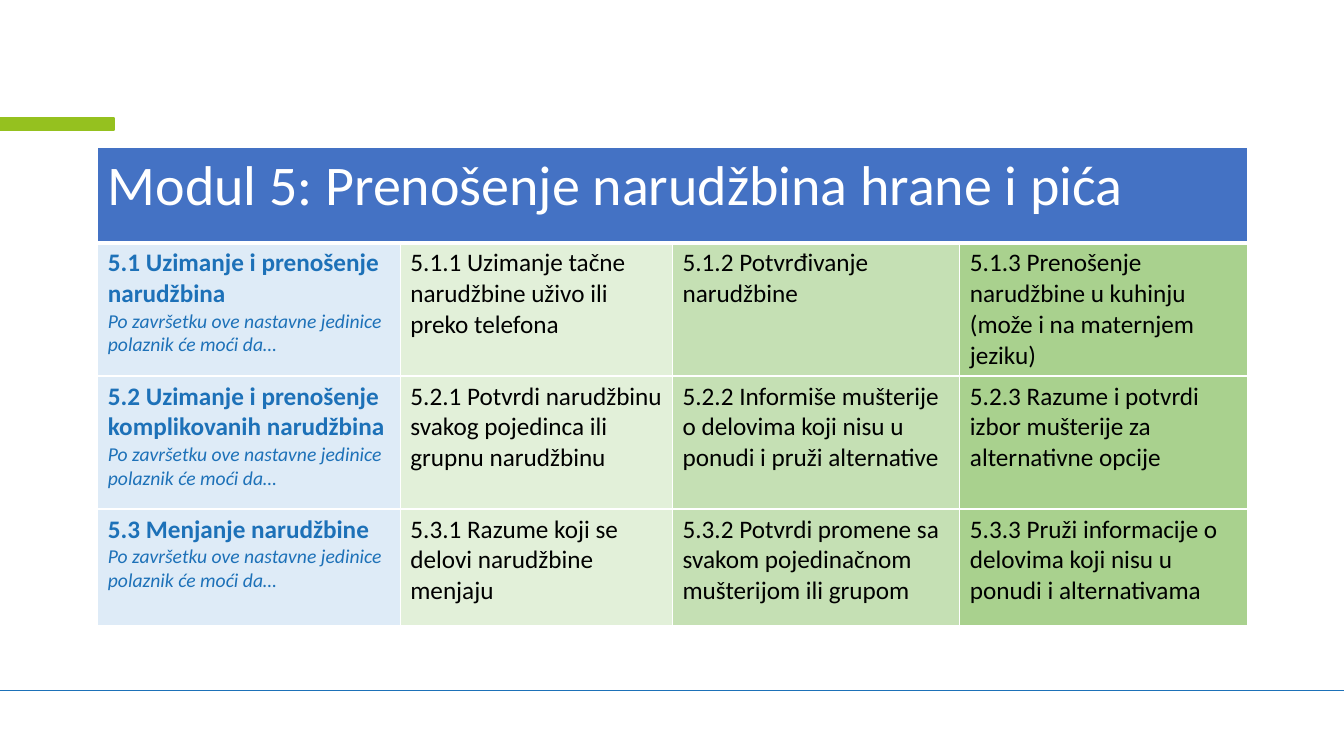
from lxml import etree
from pptx import Presentation
from pptx.dml.color import RGBColor
from pptx.enum.shapes import MSO_CONNECTOR, MSO_SHAPE
from pptx.oxml.ns import qn
from pptx.util import Inches, Pt

COLORS = {
    "blue": "1D71B8",
    "lime": "95C11F",
    "header": "4472C4",
    "white": "FFFFFF",
    "black": "000000",
}
COLUMN_FILLS = ["DEEBF7", "E2F0D9", "C5E0B4", "A9D18E"]
COLUMN_WIDTHS = [3, 2.7, 2.85, 2.85]
ROW_HEIGHTS = [0.95, 1.32, 1.32, 1.16]
TITLE = "Modul 5: Prenošenje narudžbina hrane i pića"
OUTCOME = "Po završetku ove nastavne jedinice polaznik će moći da…"
UNITS = [
    ["5.1 Uzimanje i prenošenje narudžbina",
     "5.1.1 Uzimanje tačne narudžbine uživo ili preko telefona",
     "5.1.2 Potvrđivanje narudžbine",
     "5.1.3 Prenošenje narudžbine u kuhinju (može i na maternjem jeziku)"],
    ["5.2 Uzimanje i prenošenje komplikovanih narudžbina",
     "5.2.1 Potvrdi narudžbinu svakog pojedinca ili grupnu narudžbinu",
     "5.2.2 Informiše mušterije o delovima koji nisu u ponudi i pruži alternative",
     "5.2.3 Razume i potvrdi izbor mušterije za alternativne opcije"],
    ["5.3 Menjanje narudžbine",
     "5.3.1 Razume koji se delovi narudžbine menjaju",
     "5.3.2 Potvrdi promene sa svakom pojedinačnom mušterijom ili grupom",
     "5.3.3 Pruži informacije o delovima koji nisu u ponudi i alternativama"],
]


def style_cell(cell, fill, bottom_width=1):
    """Give the cell white borders and a solid fill."""
    properties = cell._tc.get_or_add_tcPr()
    for side, width in zip("LRTB", [1, 1, 1, bottom_width]):
        border = etree.SubElement(properties, qn(f"a:ln{side}"), w=str(Pt(width)))
        solid = etree.SubElement(border, qn("a:solidFill"))
        etree.SubElement(solid, qn("a:srgbClr"), val=COLORS["white"])
    cell.fill.solid()
    cell.fill.fore_color.rgb = RGBColor.from_string(fill)


def add_run(paragraph, text, size, color, bold=False, italic=False):
    run = paragraph.add_run()
    run.text = text
    run.font.name = "Calibri"
    run.font.size = Pt(size)
    run.font.bold = bold
    run.font.italic = italic
    run.font.color.rgb = RGBColor.from_string(COLORS[color])


presentation = Presentation()
presentation.slide_width = Inches(13.33)
presentation.slide_height = Inches(7.5)
slide = presentation.slides.add_slide(presentation.slide_layouts[6])

# Footer line and accent bar
footer_line = slide.shapes.add_connector(
    MSO_CONNECTOR.STRAIGHT, Inches(0), Inches(6.85), Inches(13.33), Inches(6.85))
footer_line.line.color.rgb = RGBColor.from_string(COLORS["blue"])
footer_line.line.width = Pt(1)
etree.SubElement(footer_line._element.spPr, qn("a:effectLst"))

accent_bar = slide.shapes.add_shape(
    MSO_SHAPE.RECTANGLE, Inches(0), Inches(1.17), Inches(1.13), Inches(0.12))
accent_bar.shadow.inherit = False
accent_bar.fill.solid()
accent_bar.fill.fore_color.rgb = RGBColor.from_string(COLORS["lime"])
accent_bar.line.color.rgb = RGBColor.from_string(COLORS["lime"])
accent_bar.line.width = Pt(1)

# Module table
table = slide.shapes.add_table(
    len(ROW_HEIGHTS), len(COLUMN_WIDTHS), Inches(0.97), Inches(1.46),
    Inches(sum(COLUMN_WIDTHS)), Inches(sum(ROW_HEIGHTS))).table
table.horz_banding = False
for column, width in zip(table.columns, COLUMN_WIDTHS):
    column.width = Inches(width)
for row, height in zip(table.rows, ROW_HEIGHTS):
    row.height = Inches(height)

for cell in table.rows[0].cells:
    style_cell(cell, COLORS["header"], bottom_width=3)
title_cell = table.cell(0, 0)
title_cell.merge(table.cell(0, len(COLUMN_WIDTHS) - 1))
add_run(title_cell.text_frame.paragraphs[0], TITLE, 40, "white")

for row_index, unit in enumerate(UNITS, start=1):
    for column_index, (text, fill) in enumerate(zip(unit, COLUMN_FILLS)):
        cell = table.cell(row_index, column_index)
        style_cell(cell, fill)
        paragraph = cell.text_frame.paragraphs[0]
        if column_index == 0:
            add_run(paragraph, text, 18, "blue", bold=True)
            add_run(cell.text_frame.add_paragraph(), OUTCOME, 14, "blue", italic=True)
        else:
            add_run(paragraph, text, 18, "black")

presentation.save("out.pptx")
